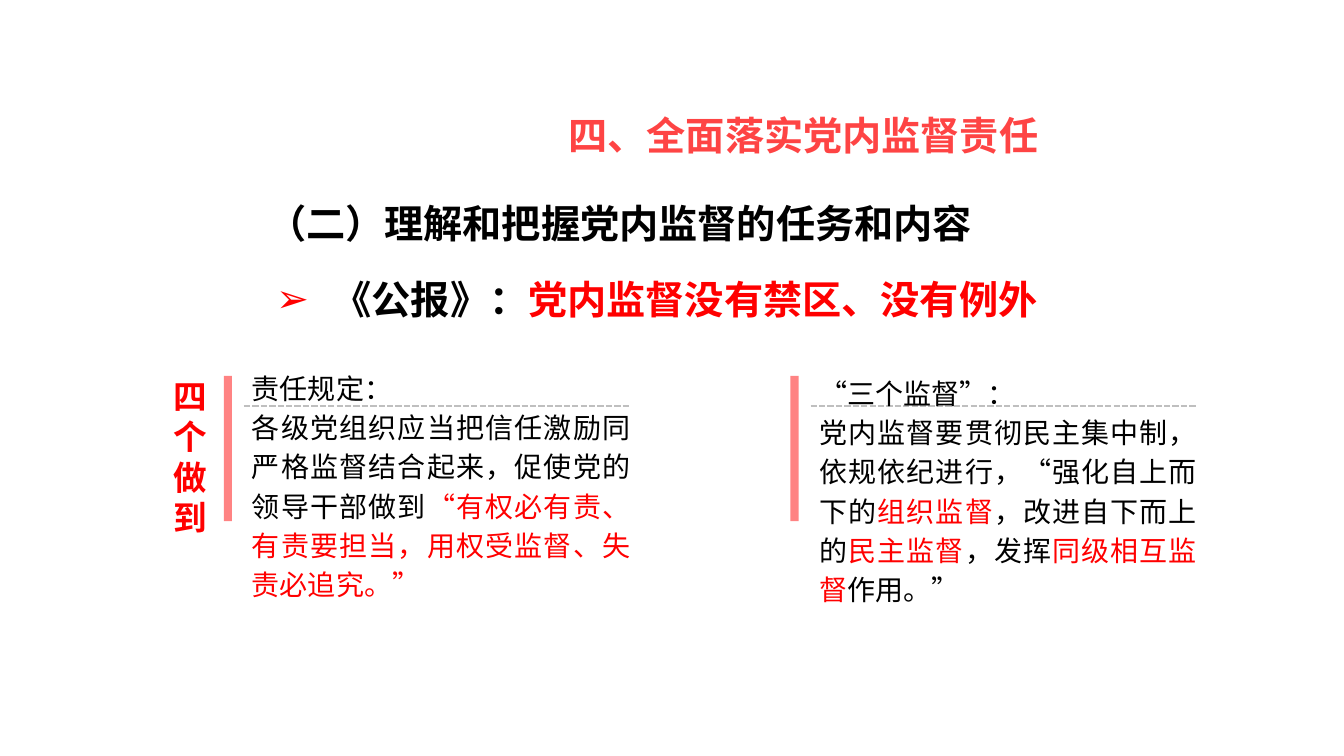
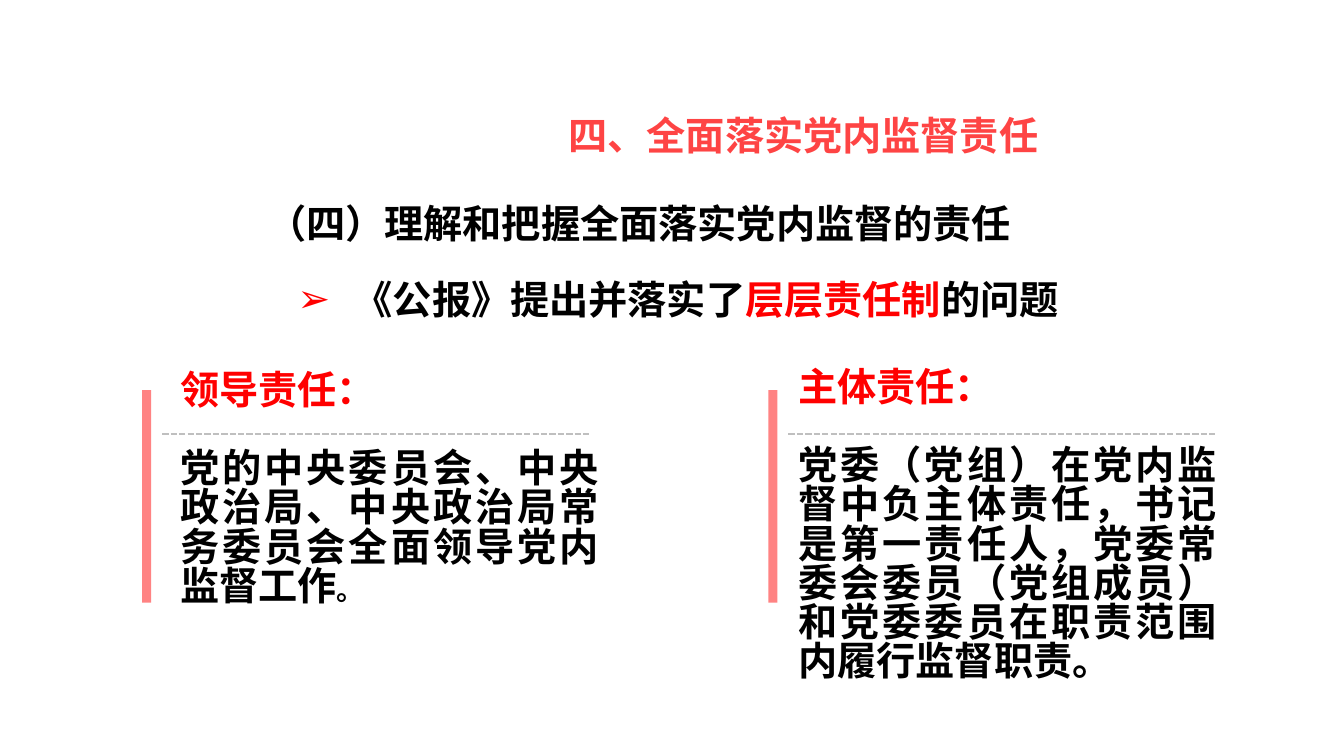
from lxml.etree import SubElement
from pptx import Presentation
from pptx.dml.color import RGBColor
from pptx.enum.dml import MSO_LINE
from pptx.enum.shapes import MSO_CONNECTOR, MSO_SHAPE
from pptx.enum.text import MSO_AUTO_SIZE, PP_ALIGN
from pptx.oxml.ns import qn
from pptx.util import Inches, Pt

COLORS = {"black": "000000", "red": "FF0000", "bar": "FF8383",
          "rule": "BFBFBF", "light": "FE4444", "dark": "832B2B"}
FONT = "Noto Sans CJK SC"


def color(name):
    return RGBColor.from_string(COLORS[name])


class Deck:
    """Holds the style and the current slide."""

    def __init__(self):
        self.file = Presentation()
        self.file.slide_width = Inches(13.33)
        self.file.slide_height = Inches(7.5)

    def page(self, topic):
        self.slide = self.file.slides.add_slide(self.file.slide_layouts[6])
        # Running title with a gradient
        frame = self.box(5.54, 1.06, 6.2, 0.57, grow=True)
        run = self.add(frame.paragraphs[0], "四、全面落实党内监督责任", size=28, bold=True)
        fill = run.font.fill
        fill.gradient()
        fill.gradient_angle = 270
        for stop, name, place in zip(fill.gradient_stops, ("light", "dark"), (0, 1)):
            stop.color.rgb = color(name)
            stop.position = place
        # Section heading
        frame = self.box(2.55, 1.93, 9.11, 0.57, grow=True)
        self.add(frame.paragraphs[0], topic, size=28, bold=True)

    def box(self, x, y, w, h, grow=False):
        shape = self.slide.shapes.add_textbox(Inches(x), Inches(y), Inches(w), Inches(h))
        frame = shape.text_frame
        frame.word_wrap = True
        if grow:
            frame.auto_size = MSO_AUTO_SIZE.SHAPE_TO_FIT_TEXT
        return frame

    def add(self, para, text, tone="black", size=20, bold=False):
        run = para.add_run()
        run.text = text
        font = run.font
        font.size, font.bold, font.name = Pt(size), bold, FONT
        font.color.rgb = color(tone)
        SubElement(font._element, qn("a:ea")).set("typeface", FONT)
        return run

    def point(self, x, runs):
        """One line with an arrow bullet."""
        para = self.box(x, 2.68, 10.39, 0.57, grow=True).paragraphs[0]
        props = para._p.get_or_add_pPr()
        props.set("marL", str(Inches(1.26)))
        props.set("indent", str(Inches(-0.56)))
        tint = SubElement(SubElement(props, qn("a:buClr")), qn("a:srgbClr"))
        tint.set("val", COLORS["red"])
        SubElement(props, qn("a:buFont")).set("typeface", "Arial")
        SubElement(props, qn("a:buChar")).set("char", "➢")
        for text, tone in runs:
            self.add(para, text, tone, 28, True)

    def frame(self, x, y, w, h, drop, wide):
        """Upright bar with a dashed rule beside it."""
        bar = self.slide.shapes.add_shape(
            MSO_SHAPE.RECTANGLE, Inches(x), Inches(y), Inches(wide), Inches(h))
        bar.shadow.inherit = False
        bar.fill.solid()
        bar.fill.fore_color.rgb = color("bar")
        bar.line.fill.background()
        left, level = x + 0.2, y + drop
        rule = self.slide.shapes.add_connector(
            MSO_CONNECTOR.STRAIGHT, Inches(left), Inches(level),
            Inches(left + w), Inches(level))
        rule.line.color.rgb = color("rule")
        rule.line.width = Pt(1.5)
        rule.line.dash_style = MSO_LINE.SQUARE_DOT
        SubElement(rule._element.spPr, qn("a:effectLst"))

    def body(self, x, y, w, h, paras, size=20, bold=False, gap=0):
        """Justified paragraphs on a fixed line pitch."""
        frame = self.box(x, y, w, h)
        for i, runs in enumerate(paras):
            para = frame.add_paragraph() if i else frame.paragraphs[0]
            para.alignment = PP_ALIGN.JUSTIFY
            para.line_spacing = Pt(28)
            if i and gap:
                para.space_before = Pt(gap)
            for text, tone, *other in runs:
                self.add(para, text, tone, other[0] if other else size, bold)

    def label(self, x, y, w, h, text):
        """Stacked label: turned box with turned text."""
        frame = self.box(x, y, w, h)
        frame.margin_left = frame.margin_right = 0
        frame.margin_top = frame.margin_bottom = 0
        frame._txBody.bodyPr.set("vert", "vert")
        frame._parent.rotation = 270
        para = frame.paragraphs[0]
        para.alignment = PP_ALIGN.CENTER
        self.add(para, text, "red", 24, True)


def main():
    deck = Deck()

    # Slide 1: tasks and content
    deck.page("（二）理解和把握党内监督的任务和内容")
    deck.point(1.94, [("《公报》：", "black"), ("党内监督没有禁区、没有例外", "red")])
    for x in (2.22, 7.84):
        deck.frame(x, 3.73, 3.82, 1.44, 0.3, 0.08)
    deck.label(0.99, 4.39, 1.79, 0.47, "四个做到")
    deck.body(2.4, 3.58, 3.95, 2.4, [
        [("责任规定：", "black")],
        [("各级党组织应当把信任激励同严格监督结合起来，促使党的领导干部做到", "black"),
         ("“有权必有责、有责要担当，用权受监督、失责必追究。”", "red")]])
    deck.body(8.03, 3.63, 3.94, 2.4, [
        [("“三个监督”：", "black")],
        [("党内监督要贯彻民主集中制，依规依纪进行，“强化自上而下的", "black"),
         ("组织监督", "red"), ("，改进自下而上的", "black"),
         ("民主监督", "red"), ("，发挥", "black"),
         ("同级相互监督", "red"), ("作用。”", "black")]])

    # Slide 2: layers of duty
    deck.page("（四）理解和把握全面落实党内监督的责任")
    deck.point(2.15, [("《公报》提出并落实了", "black"), ("层层责任制", "red"),
                      ("的问题", "black")])
    duties = [
        (1.41, 1.69, 3.65, "领导责任：",
         [("党的中央委员会、中央政治局、中央政治局常务委员会全面领导党内监督工作", "black"),
          ("。", "black", 20)]),
        (7.62, 7.82, 3.62, "主体责任：",
         [("党委（党组）在党内监督中负主体责任，书记是第一责任人，党委常委会委员"
           "（党组成员）和党委委员在职责范围内履行监督职责。", "black")])]
    for bar, left, top, head, runs in duties:
        deck.frame(bar, 3.87, 4.24, 2.11, 0.44, 0.09)
        deck.body(left, top, 4.35, 3.5, [[(head, "red")], runs], 28, True, 28)

    deck.file.save("out.pptx")


if __name__ == "__main__":
    main()
